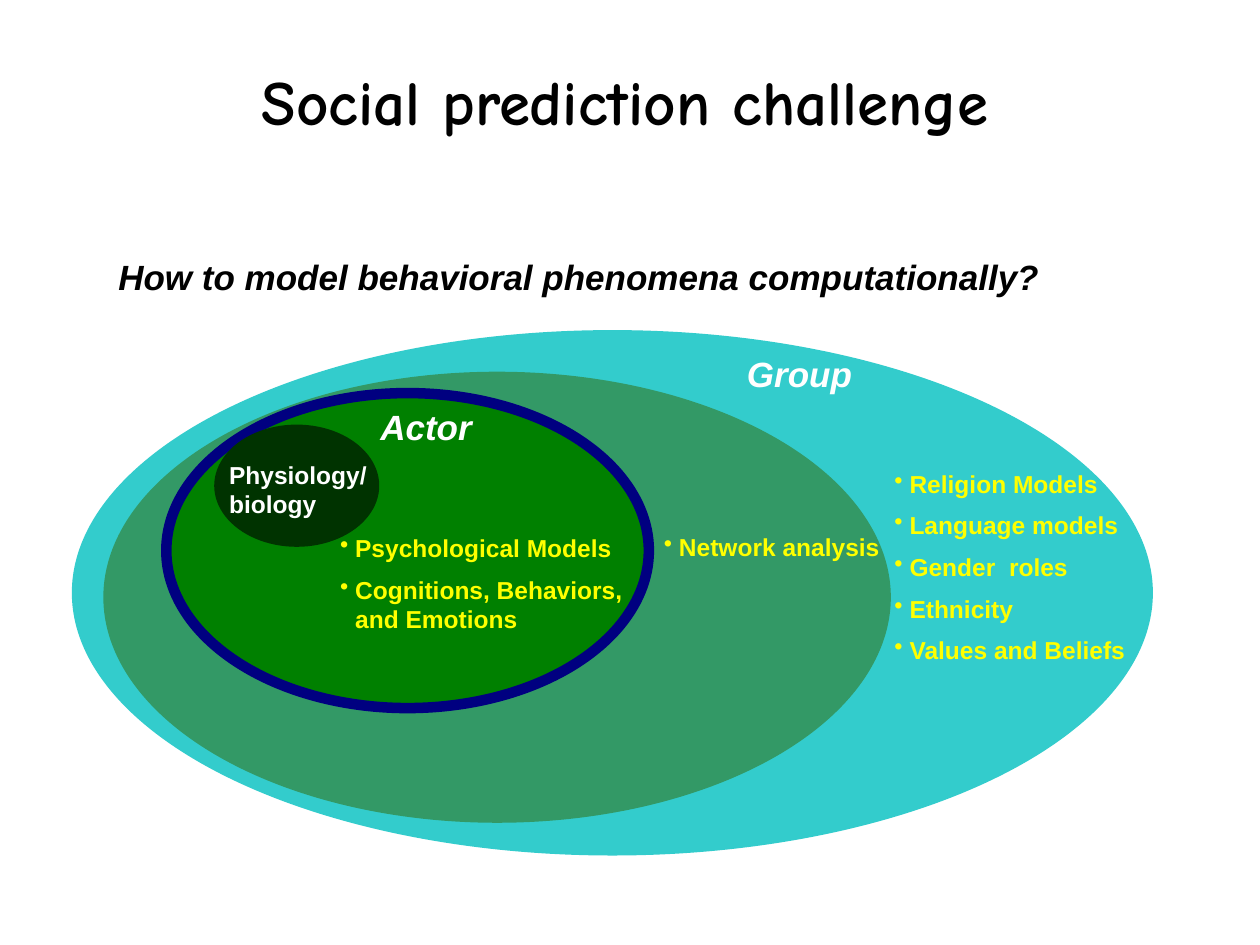
from pptx import Presentation
from pptx.dml.color import RGBColor
from pptx.enum.shapes import MSO_SHAPE
from pptx.enum.text import MSO_ANCHOR, MSO_AUTO_SIZE, PP_ALIGN
from pptx.oxml.ns import qn
from pptx.util import Inches, Pt
from lxml.etree import SubElement


def rgb(value):
    return RGBColor.from_string(value)


class SlideBuilder:
    text_font = "Arial"
    title_font = "Comic Neue"
    white, yellow, black = "FFFFFF", "FFFF00", "000000"
    heading_size, label_size = 20, 14

    def __init__(self, slide):
        self.s = slide

    def style(self, p, size, color, italic=False, font=None):
        for r in p.runs:
            r.font.name = font or self.text_font
            r.font.size = Pt(size)
            r.font.bold = True
            r.font.italic = italic
            r.font.color.rgb = rgb(color)

    def title(self, text, *box):
        sp = self.s.shapes.title
        sp.left, sp.top, sp.width, sp.height = map(Inches, box)
        tf = sp.text_frame
        tf.text = text
        tf.vertical_anchor = MSO_ANCHOR.MIDDLE
        tf.paragraphs[0].alignment = PP_ALIGN.CENTER
        self.style(tf.paragraphs[0], 36, self.black, font=self.title_font)

    def ellipse(self, fill, *box, line=None):
        sp = self.s.shapes.add_shape(MSO_SHAPE.OVAL, *map(Inches, box))
        sp.shadow.inherit = False
        sp.fill.solid()
        sp.fill.fore_color.rgb = rgb(fill)
        if line:
            sp.line.color.rgb = rgb(line)
            sp.line.width = Pt(6)
        else:
            sp.line.fill.background()

    def text_frame(self, text, box):
        tf = self.s.shapes.add_textbox(*map(Inches, box)).text_frame
        tf.word_wrap = True
        tf.auto_size = MSO_AUTO_SIZE.SHAPE_TO_FIT_TEXT
        tf.text = text
        return tf

    def heading(self, text, color, *box):
        tf = self.text_frame(text, box)
        self.style(tf.paragraphs[0], self.heading_size, color, italic=True)

    def label(self, text, *box):
        tf = self.text_frame(text, box)
        self.style(tf.paragraphs[0], self.label_size, self.white)

    def bullets(self, items, *box):
        tf = self.text_frame("\n".join(items), box)
        for i, p in enumerate(tf.paragraphs):
            pPr = p._p.get_or_add_pPr()
            pPr.set("marL", str(Inches(0.12)))
            pPr.set("indent", str(-Inches(0.12)))
            SubElement(pPr, qn("a:buChar"), char="•")
            if i:
                p.space_before = Pt(self.label_size / 2)
            self.style(p, self.label_size, self.yellow)


def main():
    prs = Presentation()
    prs.slide_width, prs.slide_height = Inches(10), Inches(7.5)
    b = SlideBuilder(prs.slides.add_slide(prs.slide_layouts[5]))

    # Title and question
    b.title("Social prediction challenge", 1, 0.17, 7.92, 1.25)
    b.heading("How to model behavioral phenomena computationally?",
              b.black, 0.84, 1.98, 8.91, 0.43)

    # Nested levels: group, network, actor, physiology
    b.ellipse("33CCCC", 0.57, 2.62, 8.58, 4.17)
    b.ellipse("339966", 0.82, 2.95, 6.25, 3.58)
    b.ellipse("008000", 1.32, 3.12, 3.83, 2.5, line="000080")
    b.ellipse("003300", 1.7, 3.37, 1.31, 0.97)

    # Names of the levels
    b.heading("Group", b.white, 5.83, 2.75, 1.45, 0.43)
    b.heading("Actor", b.white, 2.92, 3.17, 1.3, 0.43)
    b.label("Physiology/ biology", 1.72, 3.6, 1.43, 0.57)

    # Models at each level
    b.bullets(["Psychological Models", "Cognitions, Behaviors, and Emotions"],
              2.6, 4.18, 2.48, 0.91)
    b.bullets(["Network analysis"], 5.17, 4.17, 2.12, 0.33)
    b.bullets(["Religion Models", "Language models", "Gender  roles",
               "Ethnicity", "Values and Beliefs"], 7, 3.67, 2.12, 1.73)

    prs.save("out.pptx")


if __name__ == "__main__":
    main()
